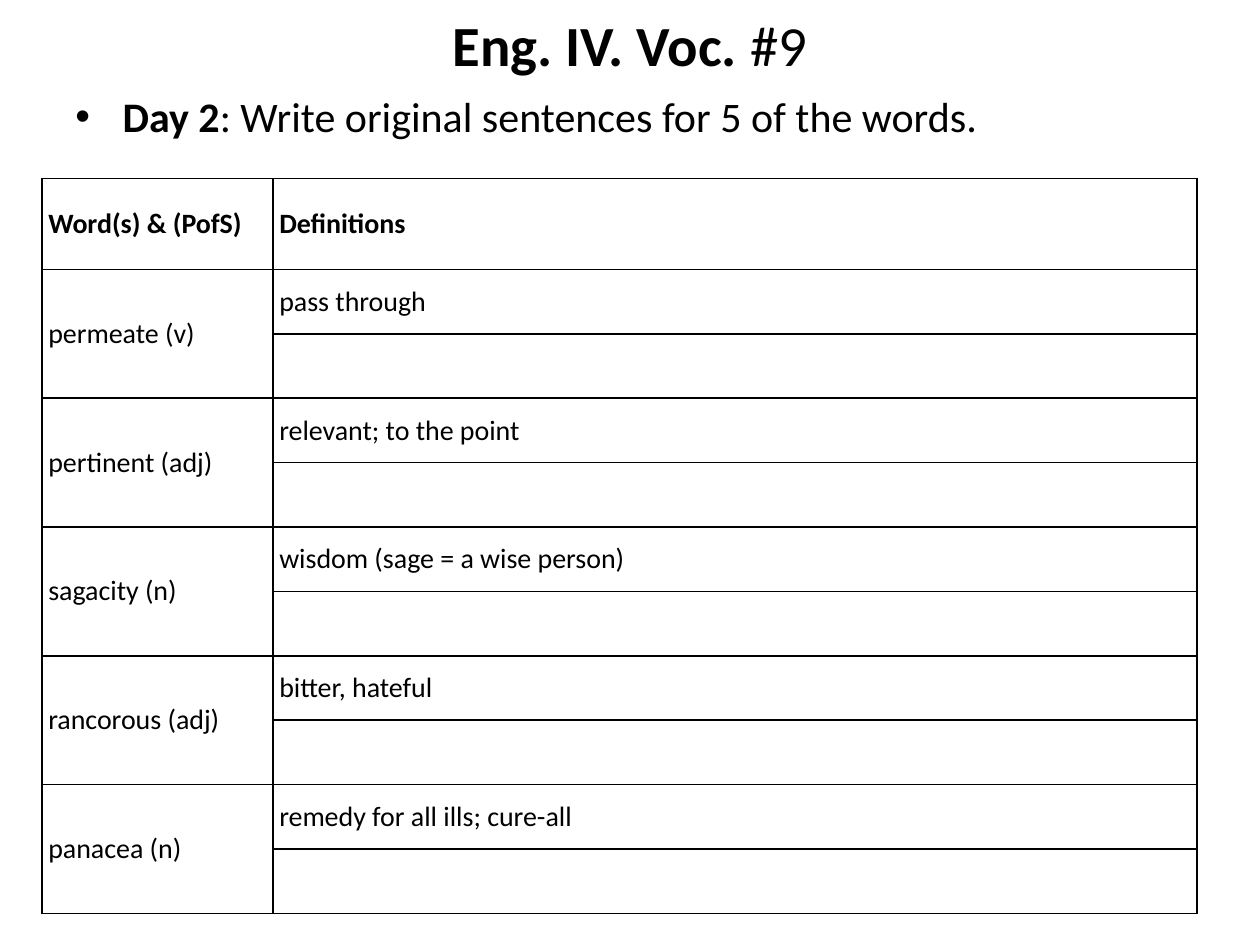
import pptx
import pptx.dml.color
import pptx.enum.text
import pptx.oxml
import pptx.oxml.ns
import pptx.util
from lxml import etree

Pt = pptx.util.Pt
ALIGN = pptx.enum.text.PP_ALIGN
ANCHOR = pptx.enum.text.MSO_ANCHOR
BLACK = pptx.dml.color.RGBColor(0, 0, 0)
qn = pptx.oxml.ns.qn

WORDS = [
    ("permeate (v)", "pass through"),
    ("pertinent (adj)", "relevant; to the point"),
    ("sagacity (n)", "wisdom (sage = a wise person)"),
    ("rancorous (adj)", "bitter, hateful"),
    ("panacea (n)", "remedy for all ills; cure-all"),
]
HEADINGS = ("Word(s) & (PofS)", "Definitions")
COLUMN_WIDTHS = (132, 528)
HEADER_HEIGHT, ROW_HEIGHT = 52, 36.8
CELL_FORMAT = {
    "margin_left": Pt(3.6),
    "margin_right": Pt(3.6),
    "margin_top": 0,
    "margin_bottom": 0,
    "vertical_anchor": ANCHOR.MIDDLE,
}


def add_span(para, text, size, bold):
    span = para.add_run()
    span.text = text
    font_format = {"name": "Calibri", "size": Pt(size), "bold": bold}
    for name, value in font_format.items():
        setattr(span.font, name, value)
    span.font.color.rgb = BLACK


def add_borders(cell):
    properties = cell._tc.get_or_add_tcPr()
    for position, side in enumerate(("lnL", "lnR", "lnT", "lnB")):
        line = etree.Element(qn(f"a:{side}"), w=str(Pt(1)))
        fill = etree.SubElement(line, qn("a:solidFill"))
        etree.SubElement(fill, qn("a:srgbClr"), val=str(BLACK))
        properties.insert(position, line)


deck = pptx.Presentation()
deck.slide_width, deck.slide_height = Pt(720), Pt(540)
page = deck.slides.add_slide(deck.slide_layouts[6])

text_boxes = [
    (0, 50.4, 32.4, ANCHOR.MIDDLE, ALIGN.CENTER, "Eng. IV. Voc. ", "#9"),
    (48.24, 41.76, 24, ANCHOR.TOP, ALIGN.LEFT, "Day 2",
     ": Write original sentences for 5 of the words."),
]
for top, height, size, anchor, alignment, bold_text, plain_text in text_boxes:
    box = page.shapes.add_textbox(Pt(36), Pt(top), Pt(648), Pt(height))
    frame_format = {"word_wrap": True, "vertical_anchor": anchor}
    for name, value in frame_format.items():
        setattr(box.text_frame, name, value)
    para = box.text_frame.paragraphs[0]
    para.alignment = alignment
    add_span(para, bold_text, size, True)
    add_span(para, plain_text, size, False)

bullet_properties = para._p.get_or_add_pPr()
bullet_properties.set("marL", str(Pt(27)))
bullet_properties.set("indent", str(-Pt(27)))
etree.SubElement(bullet_properties, qn("a:buFont"), typeface="Arial")
etree.SubElement(bullet_properties, qn("a:buChar"), char="•")

row_count = 1 + 2 * len(WORDS)
table_height = HEADER_HEIGHT + ROW_HEIGHT * (row_count - 1)
table = page.shapes.add_table(
    row_count, 2, Pt(24), Pt(102), Pt(sum(COLUMN_WIDTHS)), Pt(table_height)
).table
for column, width in zip(table.columns, COLUMN_WIDTHS):
    column.width = Pt(width)
for index, row in enumerate(table.rows):
    row.height = Pt(ROW_HEIGHT if index else HEADER_HEIGHT)
    for cell in row.cells:
        for name, value in CELL_FORMAT.items():
            setattr(cell, name, value)
        cell.fill.background()
        add_borders(cell)

for column, heading in enumerate(HEADINGS):
    add_span(table.cell(0, column).text_frame.paragraphs[0], heading, 16, True)
for index, entry in enumerate(WORDS):
    top_row = 1 + 2 * index
    table.cell(top_row, 0).merge(table.cell(top_row + 1, 0))
    for column, text in enumerate(entry):
        add_span(table.cell(top_row, column).text_frame.paragraphs[0], text, 16, False)

deck.save("out.pptx")
